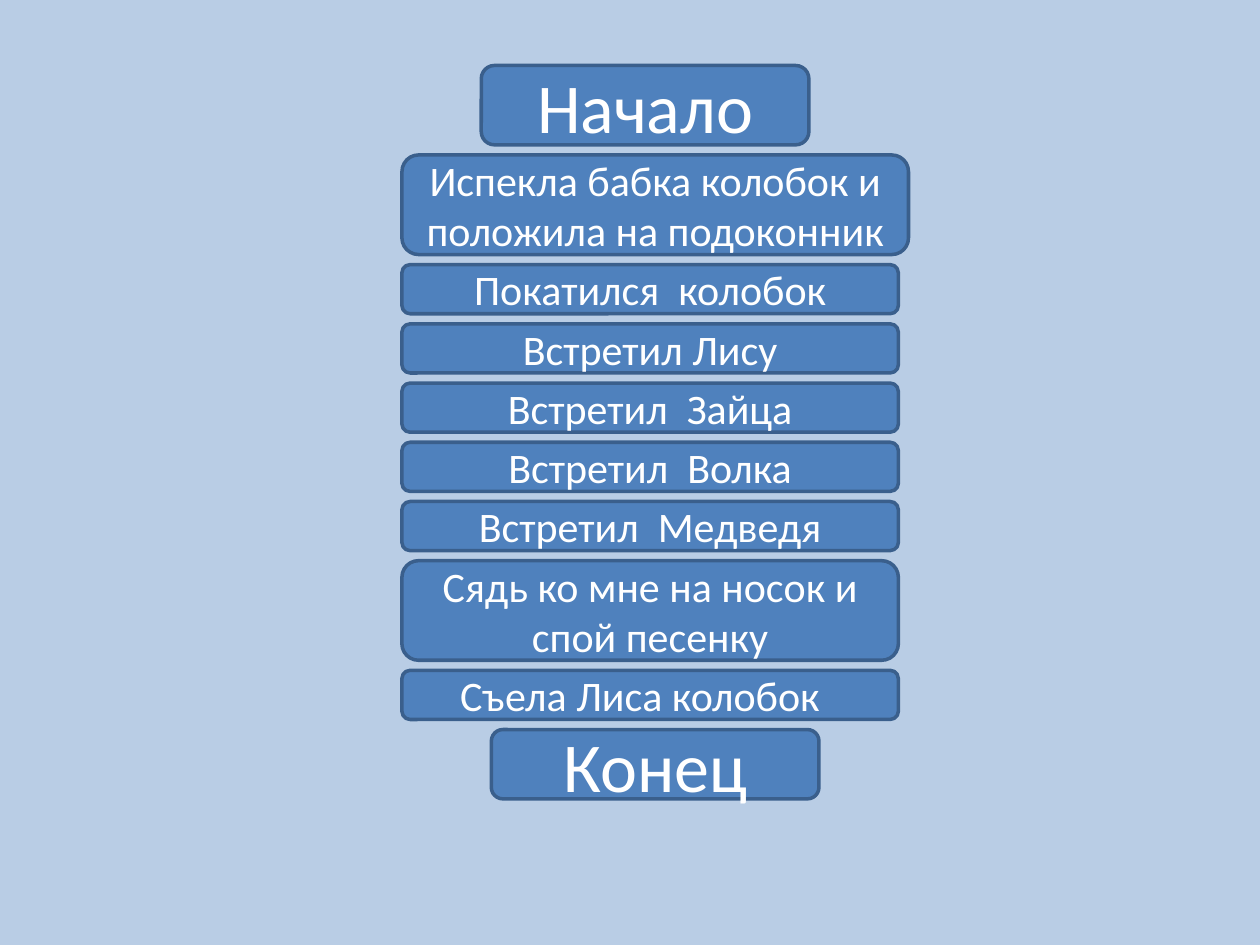
from pptx import Presentation
from pptx.dml.color import RGBColor
from pptx.enum.shapes import MSO_SHAPE as Shape
from pptx.enum.text import MSO_ANCHOR as Anchor, PP_ALIGN as Align
from pptx.util import Pt

PX = 9144
BACKGROUND = RGBColor(0xB9, 0xCD, 0xE5)
BLUE = RGBColor(0x4F, 0x81, 0xBD)
BORDER = RGBColor(0x3A, 0x5F, 0x8C)
WHITE = RGBColor(0xFF, 0xFF, 0xFF)

STEP_LEFT, STEP_WIDTH = 319, 394
ONE_LINE, TWO_LINES = 39, 79
GAP = 8
INSET, LAST_STEP_INSET = 10, 26

blocks = [
    ("Начало", 382, 260, 63, 40, INSET),
    ("Испекла бабка колобок и положила на подоконник", STEP_LEFT, 402, TWO_LINES, 24, INSET),
]
for text, height, right_inset in [
    ("Покатился  колобок", ONE_LINE, INSET),
    ("Встретил Лису", ONE_LINE, INSET),
    ("Встретил  Зайца", ONE_LINE, INSET),
    ("Встретил  Волка", ONE_LINE, INSET),
    ("Встретил  Медведя", ONE_LINE, INSET),
    ("Сядь ко мне на носок и спой песенку", TWO_LINES, INSET),
    ("Съела Лиса колобок", ONE_LINE, LAST_STEP_INSET),
]:
    blocks.append((text, STEP_LEFT, STEP_WIDTH, height, 24, right_inset))
blocks.append(("Конец", 390, 260, 55, 40, INSET))

presentation = Presentation()
presentation.slide_width = 1000 * PX
presentation.slide_height = 750 * PX
slide = presentation.slides.add_slide(presentation.slide_layouts[6])
slide.background.fill.solid()
slide.background.fill.fore_color.rgb = BACKGROUND

top = 52
for text, left, width, height, size, right_inset in blocks:
    shape = slide.shapes.add_shape(
        Shape.ROUNDED_RECTANGLE, left * PX, top * PX, width * PX, height * PX
    )
    shape.shadow.inherit = False
    shape.fill.solid()
    shape.fill.fore_color.rgb = BLUE
    shape.line.color.rgb = BORDER
    shape.line.width = Pt(2)
    frame = shape.text_frame
    frame.word_wrap = True
    frame.vertical_anchor = Anchor.MIDDLE
    frame.margin_left = INSET * PX
    frame.margin_right = right_inset * PX
    paragraph = frame.paragraphs[0]
    paragraph.text = text
    paragraph.alignment = Align.CENTER
    paragraph.font.name = "Calibri"
    paragraph.font.size = Pt(size)
    paragraph.font.color.rgb = WHITE
    top += height + GAP

presentation.save("out.pptx")
